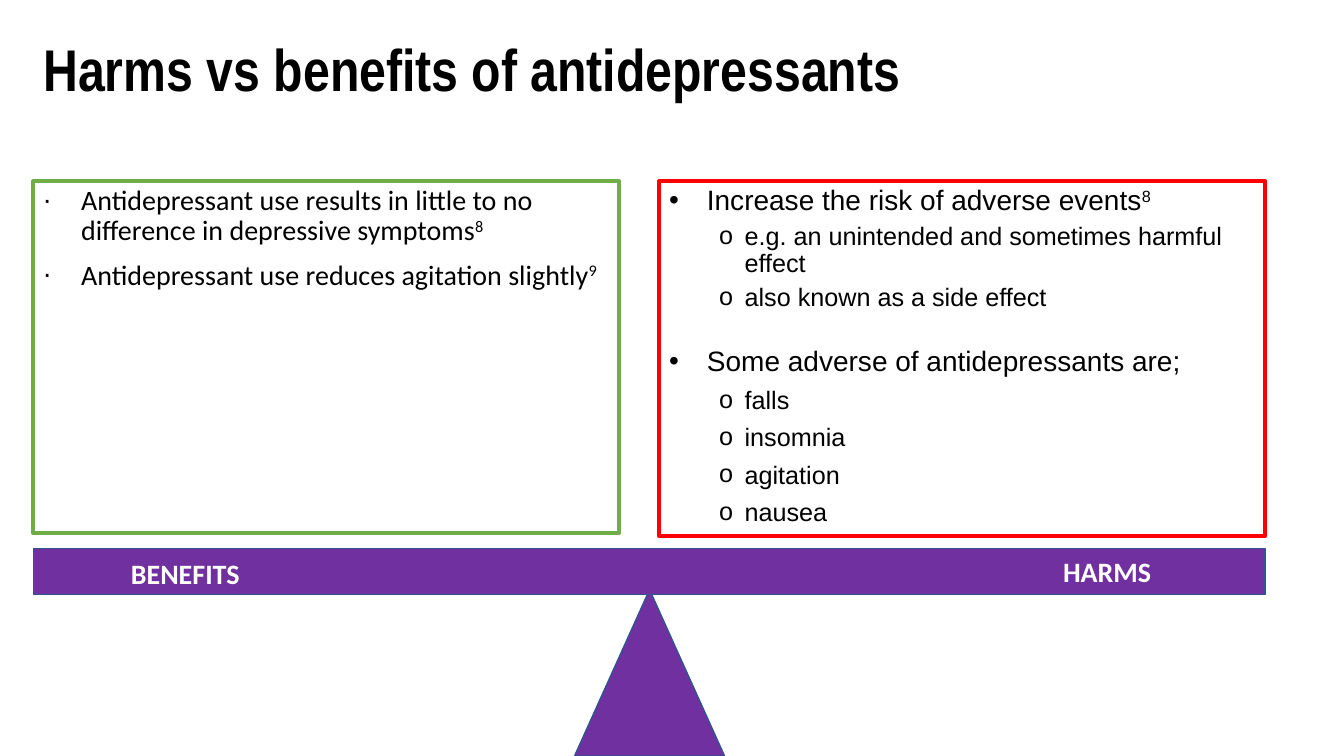
from lxml.etree import SubElement
from pptx import Presentation
from pptx.dml.color import RGBColor
from pptx.enum.shapes import MSO_SHAPE
from pptx.enum.text import MSO_ANCHOR, MSO_AUTO_SIZE, PP_ALIGN
from pptx.oxml.ns import qn
from pptx.util import Cm, Pt

BLACK = RGBColor(0x00, 0x00, 0x00)
WHITE = RGBColor(0xFF, 0xFF, 0xFF)
GREEN = RGBColor(0x70, 0xAD, 0x47)
RED = RGBColor(0xFF, 0x00, 0x00)
PURPLE = RGBColor(0x70, 0x30, 0xA0)
NAVY = RGBColor(0x31, 0x53, 0x8F)

LEFT_EDGE = 0.84
PANEL_TOP = 4.57

# Each item: text, superscript, level, space before, line spacing
BENEFITS = [
    ("Antidepressant use results in little to no difference in depressive symptoms", "8", 0, 0, 0.9),
    ("Antidepressant use reduces agitation slightly", "9", 0, 10, 0.9),
]
HARMS = [
    ("Increase the risk of adverse events", "8", 0, 0, 0.9),
    ("e.g. an unintended and sometimes harmful effect", "", 1, 5, 0.9),
    ("also known as a side effect", "", 1, 5, 0.9),
    ("Some adverse of antidepressants are;", "", 0, 25, 0.9),
] + [(effect, "", 1, 5, 1.0) for effect in ("falls", "insomnia", "agitation", "nausea")]


class BalanceSlide:
    def __init__(self, deck):
        self.slide = deck.slides.add_slide(deck.slide_layouts[3])
        self.label_font = "Calibri"

    def place(self, shape, left, top, width, height):
        shape.left, shape.top = Cm(left), Cm(top)
        shape.width, shape.height = Cm(width), Cm(height)

    def style_run(self, run, font_name, size, color, bold=False):
        run.font.name = font_name
        run.font.size = Pt(size)
        run.font.color.rgb = color
        run.font.bold = bold

    def prepare_frame(self, shape):
        frame = shape.text_frame
        frame.word_wrap = True
        frame.auto_size = MSO_AUTO_SIZE.NONE
        frame.vertical_anchor = MSO_ANCHOR.TOP
        return frame

    def add_title(self, text, *bounds):
        title = self.slide.shapes.title
        self.place(title, *bounds)
        frame = self.prepare_frame(title)
        frame.text = text
        para = frame.paragraphs[0]
        para.alignment = PP_ALIGN.LEFT
        para.line_spacing = 0.9
        self.style_run(para.runs[0], "Arial Narrow", 42, BLACK, bold=True)

    def set_bullet(self, para, symbol, margin, hanging):
        properties = para._p.get_or_add_pPr()
        properties.set("marL", str(Cm(margin)))
        properties.set("indent", str(-Cm(hanging)))
        color = SubElement(properties, qn("a:buClr"))
        SubElement(color, qn("a:srgbClr"), val=str(BLACK))
        SubElement(properties, qn("a:buFont"), typeface="Arial")
        SubElement(properties, qn("a:buChar"), char=symbol)

    def add_panel(self, index, items, symbol, font_name, border, *bounds):
        """Fill a body placeholder with a bordered two-level list."""
        panel = self.slide.placeholders[index]
        self.place(panel, *bounds)
        panel.line.color.rgb = border
        panel.line.width = Pt(3)
        frame = self.prepare_frame(panel)
        for number, (text, note, level, before, spacing) in enumerate(items):
            para = frame.add_paragraph() if number else frame.paragraphs[0]
            para.text = text
            para.level = level
            if level:
                self.set_bullet(para, "o", 1.9, 0.64)
            else:
                self.set_bullet(para, symbol, 0.95, 0.95)
            para.space_before = Pt(before)
            para.line_spacing = spacing
            if note:
                superscript = para.add_run()
                superscript.text = note
                superscript._r.get_or_add_rPr().set("baseline", "30000")
            for run in para.runs:
                self.style_run(run, font_name, 18 if level else 20, BLACK)

    def add_block(self, kind, *bounds):
        block = self.slide.shapes.add_shape(kind, *map(Cm, bounds))
        block.shadow.inherit = False
        block.fill.solid()
        block.fill.fore_color.rgb = PURPLE
        block.line.color.rgb = NAVY
        block.line.width = Pt(1)

    def add_label(self, text, left, top):
        box = self.slide.shapes.add_textbox(Cm(left), Cm(top), Cm(4.27), Cm(1.12))
        frame = self.prepare_frame(box)
        frame.text = text
        self.style_run(frame.paragraphs[0].runs[0], self.label_font, 20, WHITE, bold=True)


def main():
    deck = Presentation()
    deck.slide_width, deck.slide_height = Cm(33.87), Cm(19.05)
    page = BalanceSlide(deck)
    page.add_title("Harms vs benefits of antidepressants", LEFT_EDGE, 0.91, 23.88, 3.99)
    page.add_panel(1, BENEFITS, "∙", "Calibri", GREEN, LEFT_EDGE, PANEL_TOP, 14.76, 8.86)
    page.add_panel(2, HARMS, "•", "Arial", RED, 16.61, PANEL_TOP, 15.27, 8.94)
    page.add_block(MSO_SHAPE.FLOWCHART_EXTRACT, 14.48, 14.86, 3.78, 4.19)
    page.add_block(MSO_SHAPE.RECTANGLE, LEFT_EDGE, 13.82, 31.04, 1.17)
    page.add_label("BENEFITS", 3.05, 13.89)
    page.add_label("HARMS", 26.54, 13.84)
    deck.save("out.pptx")


if __name__ == "__main__":
    main()
